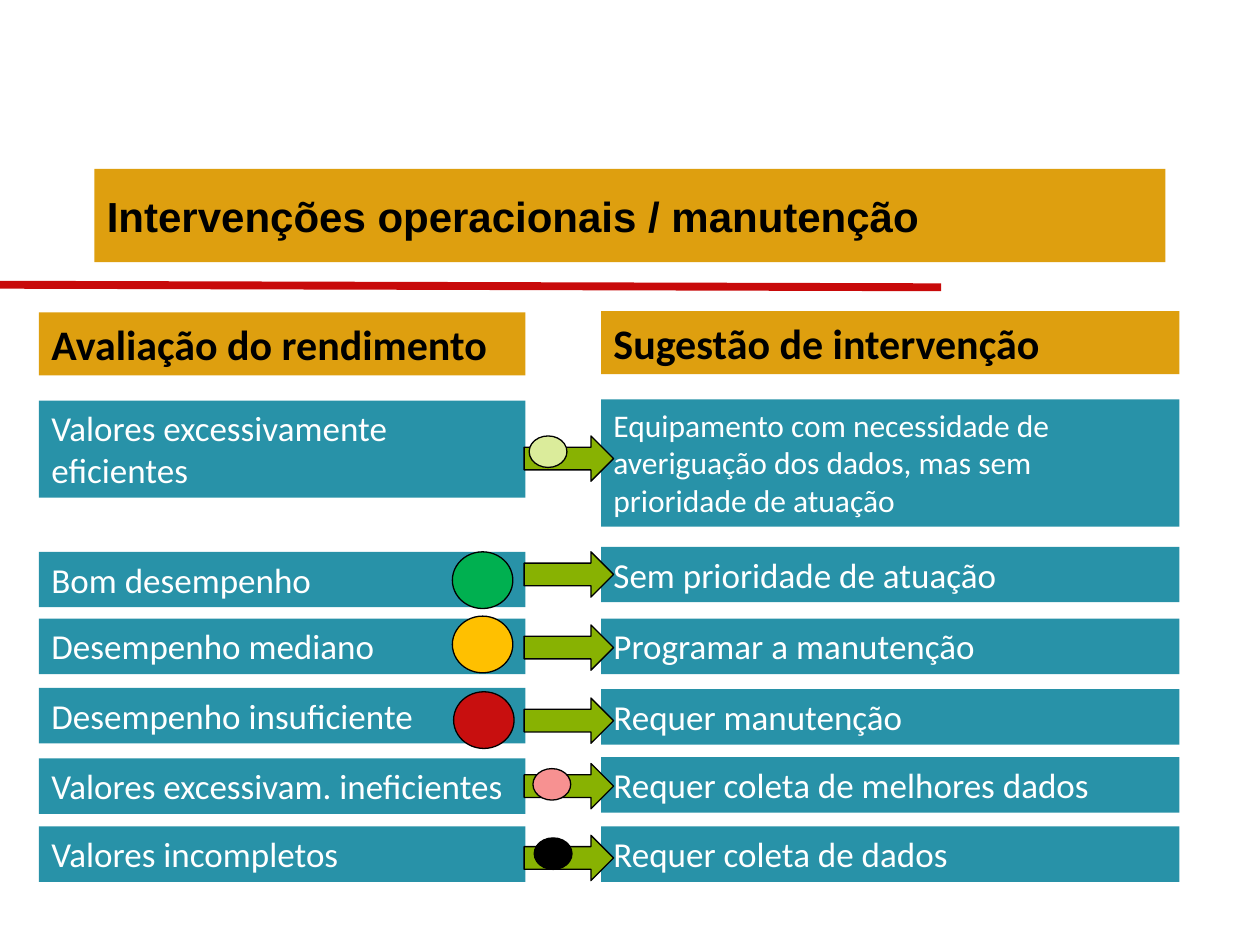
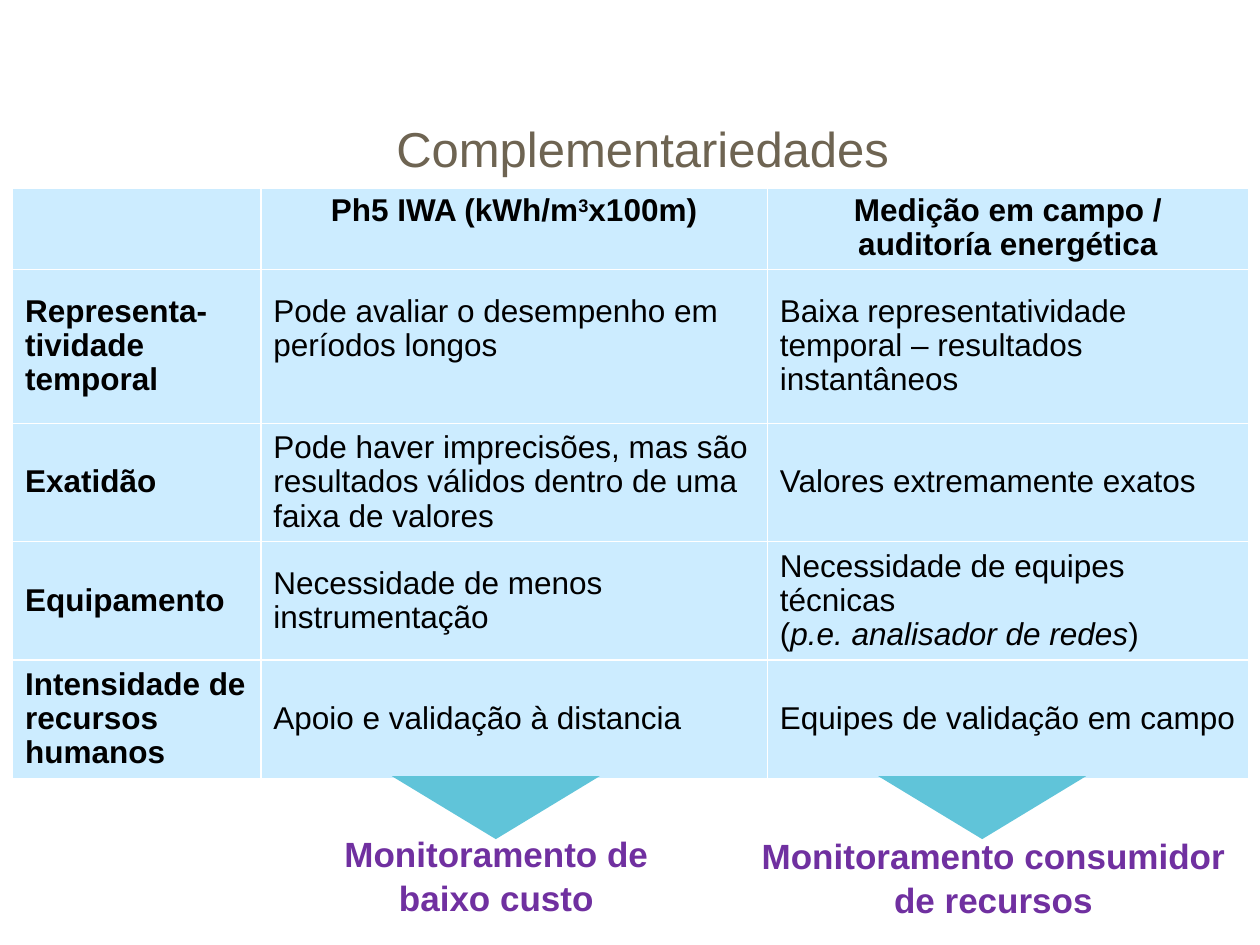
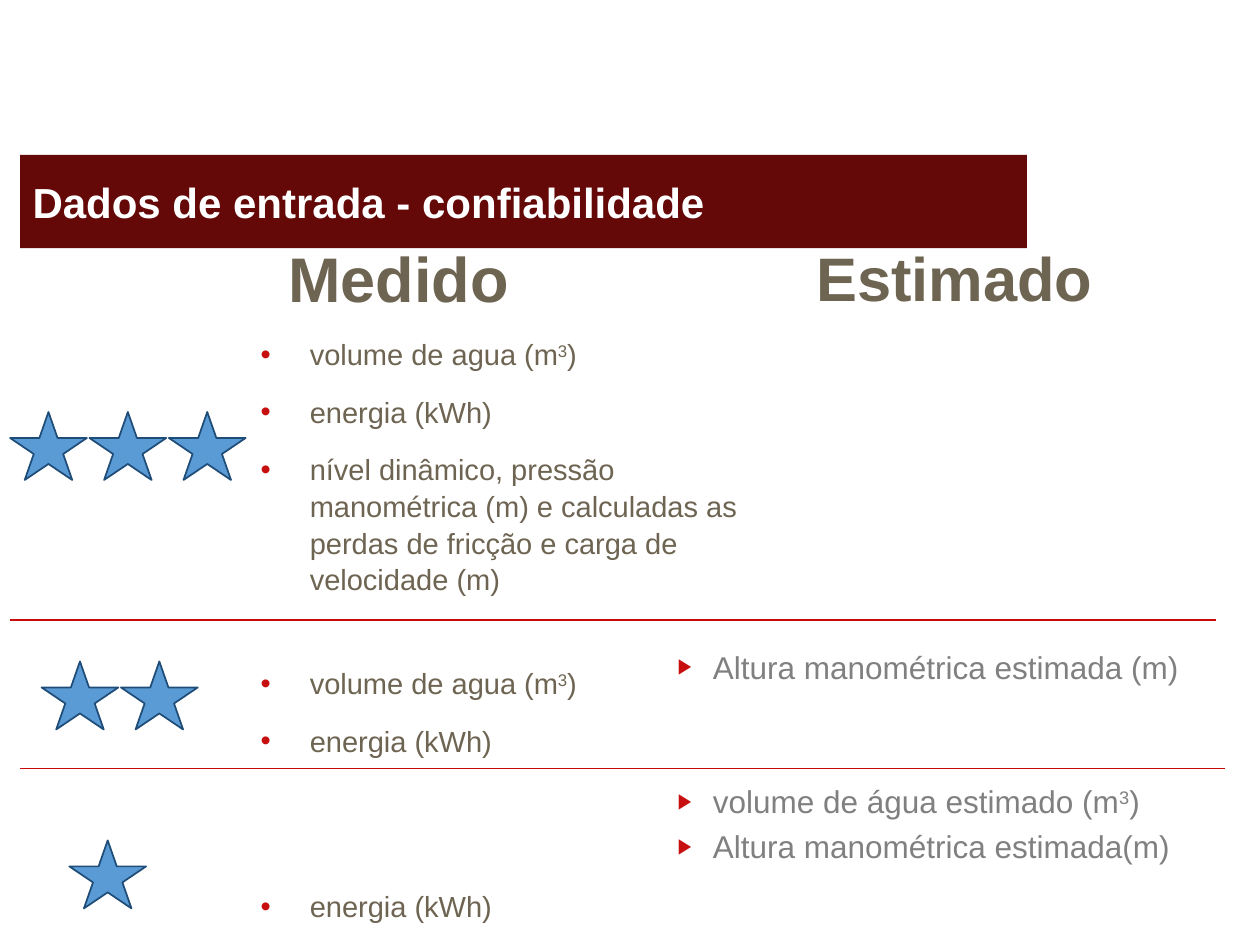
"""Builds three slides on pump performance: actions, complementarity and data reliability."""
from lxml.etree import SubElement
from pptx import Presentation
from pptx.dml.color import RGBColor
from pptx.enum.shapes import MSO_CONNECTOR, MSO_SHAPE as Shape
from pptx.enum.text import MSO_ANCHOR as Anchor, PP_ALIGN as Align
from pptx.oxml.ns import qn
from pptx.util import Inches, Pt

COLORS = {
    "gold": "DE9F0F", "teal": "2892A8", "maroon": "640808", "rule": "C80A0A",
    "bullet": "C80F0F", "arrow": "88B202", "black": "000000", "white": "FFFFFF",
    "taupe": "6E6452", "gray": "808080", "purple": "7030A0", "cell": "CCECFF",
    "cyan": "60C4D9", "star": "5B9BD5", "star_edge": "1F4D78",
    "good": "00B050", "medium": "FFC000", "poor": "C80F0F",
    "efficient": "DBEC9B", "inefficient": "F79191",
}
DOT = {"char": "•", "indent": 0.39, "hanging": 0.39}
ARROWHEAD = {"char": "▶", "indent": 0.4, "hanging": 0.28, "percent": 68}
CUBED = ("3", {"baseline": 30})


class SlideBuilder:
    """Holds the deck style and the current slide."""

    def __init__(self, deck):
        self.deck = deck
        self.slide = None

    def new_slide(self):
        self.slide = self.deck.slides.add_slide(self.deck.slide_layouts[6])

    def color(self, name):
        return RGBColor.from_string(COLORS[name])

    def add_span(self, para, text, style):
        span = para.add_run()
        span.text = text
        for name, value in style.items():
            if name == "color":
                span.font.color.rgb = self.color(value)
            elif name == "baseline":
                span._r.get_or_add_rPr().set("baseline", str(value * 1000))
            else:
                setattr(span.font, name, value)

    def add_bullet(self, para, bullet):
        props = para._p.get_or_add_pPr()
        props.set("marL", str(Inches(bullet["indent"])))
        props.set("indent", str(-Inches(bullet["hanging"])))
        tint = SubElement(props, qn("a:buClr"))
        SubElement(tint, qn("a:srgbClr")).set("val", COLORS["bullet"])
        if "percent" in bullet:
            SubElement(props, qn("a:buSzPct")).set("val", str(bullet["percent"] * 1000))
        SubElement(props, qn("a:buFont")).set("typeface", "Arial")
        SubElement(props, qn("a:buChar")).set("char", bullet["char"])

    def fill_text(self, frame, paragraphs, font, size, color, bold=False, layout=None,
                  bullet=None, before=0):
        frame.word_wrap = True
        base = {"name": font, "size": Pt(size), "bold": bold, "color": color}
        for index, content in enumerate(paragraphs):
            para = frame.add_paragraph() if index else frame.paragraphs[0]
            for name, value in (layout or {}).items():
                setattr(para, name, value)
            if index and before:
                para.space_before = Pt(before)
            if bullet:
                self.add_bullet(para, bullet)
            spans = [(content, {})] if isinstance(content, str) else content
            for text, extra in spans:
                self.add_span(para, text, {**base, **extra})

    def shape(self, kind, left, top, width, height, fill, line=None, weight=0.75):
        box = self.slide.shapes.add_shape(
            kind, Inches(left), Inches(top), Inches(width), Inches(height))
        box.shadow.inherit = False
        box.fill.solid()
        box.fill.fore_color.rgb = self.color(fill)
        if line:
            box.line.color.rgb = self.color(line)
            box.line.width = Pt(weight)
        else:
            box.line.fill.background()
        return box

    def label(self, text, left, top, width, height, fill, color="white", font="Calibri",
              size=20, bold=False, anchor=Anchor.TOP):
        box = self.shape(Shape.RECTANGLE, left, top, width, height, fill)
        box.text_frame.vertical_anchor = anchor
        self.fill_text(box.text_frame, [text], font, size, color, bold,
                       {"alignment": Align.LEFT})

    def banner(self, text, left, top, width, fill, color):
        self.label(text, left, top, width, 0.74, fill, color, "Arial", 24, True, Anchor.MIDDLE)

    def text(self, paragraphs, left, top, width, height, size, color="taupe",
             anchor=Anchor.TOP, **style):
        box = self.slide.shapes.add_textbox(
            Inches(left), Inches(top), Inches(width), Inches(height))
        box.text_frame.vertical_anchor = anchor
        self.fill_text(box.text_frame, paragraphs, "Arial", size, color, **style)

    def rule(self, left, top, right, bottom, weight):
        line = self.slide.shapes.add_connector(
            MSO_CONNECTOR.STRAIGHT, Inches(left), Inches(top), Inches(right), Inches(bottom))
        line.line.color.rgb = self.color("rule")
        line.line.width = Pt(weight)
        SubElement(line._element.spPr, qn("a:effectLst"))

    def table(self, rows, left, top, widths, heights):
        grid = self.slide.shapes.add_table(
            len(rows), len(widths), Inches(left), Inches(top),
            Inches(sum(widths)), Inches(sum(heights))).table
        grid.horz_banding = False
        for column, width in zip(grid.columns, widths):
            column.width = Inches(width)
        for row, height in zip(grid.rows, heights):
            row.height = Inches(height)
        for r, row in enumerate(rows):
            for c, paragraphs in enumerate(row):
                cell = grid.cell(r, c)
                cell.fill.solid()
                cell.fill.fore_color.rgb = self.color("cell")
                cell.vertical_anchor = Anchor.MIDDLE if r else Anchor.TOP
                layout = {"alignment": Align.LEFT if r else Align.CENTER,
                          "line_spacing": 0.97}
                self.fill_text(cell.text_frame, paragraphs, "Arial", 18, "black",
                               r == 0 or c == 0, layout)
        return grid


def build_interventions(page):
    page.new_slide()
    page.rule(0, 2.26, 7.47, 2.28, 4.5)
    page.banner("Intervenções operacionais / manutenção", 0.75, 1.34, 8.5, "gold", "black")
    left_x, left_width, right_x, right_width = 0.31, 3.86, 4.77, 4.59
    for text, left, top, width in (
            ("Avaliação do rendimento", left_x, 2.48, left_width),
            ("Sugestão de intervenção", right_x, 2.47, right_width)):
        page.label(text, left, top, width, 0.5, "gold", "black", size=24, bold=True)

    large, small = (0.48, 0.45), (0.3, 0.25)
    ratings = [
        ("Valores excessivamente eficientes", 3.18,
         "Equipamento com necessidade de averiguação dos dados, mas sem prioridade de atuação",
         3.17, 3.46, (4.2, 3.46), small, "efficient"),
        ("Bom desempenho", 4.38, "Sem prioridade de atuação",
         4.34, 4.38, (3.59, 4.38), large, "good"),
        ("Desempenho mediano", 4.91, "Programar a manutenção",
         4.91, 4.96, (3.59, 4.89), large, "medium"),
        ("Desempenho insuficiente", 5.46, "Requer manutenção",
         5.47, 5.54, (3.6, 5.49), large, "poor"),
        ("Valores excessivam. ineficientes", 6.02, "Requer coleta de melhores dados",
         6.01, 6.06, (4.23, 6.1), small, "inefficient"),
        ("Valores incompletos", 6.56, "Requer coleta de dados",
         6.56, 6.63, (4.24, 6.65), small, "black"),
    ]
    for index, (rating, rating_top, action, action_top, arrow_top, spot, size, color) in enumerate(ratings):
        rating_height, action_height, action_size = (0.44, 0.44, 20) if index else (0.77, 1.01, 18)
        page.label(rating, left_x, rating_top, left_width, rating_height, "teal")
        page.label(action, right_x, action_top, right_width, action_height, "teal",
                   size=action_size)
        page.shape(Shape.RIGHT_ARROW, 4.16, arrow_top, 0.71, 0.36, "arrow", "black")
        page.shape(Shape.OVAL, *spot, *size, color, "black")


def build_complements(page):
    page.new_slide()
    rows = [
        [[""], [[("Ph5 IWA (kWh/m", {}), CUBED, ("x100m)", {})]],
         ["Medição em campo /", "auditoría energética"]],
        [["Representa-tividade temporal"], ["Pode avaliar o desempenho em períodos longos"],
         ["Baixa representatividade temporal – resultados instantâneos"]],
        [["Exatidão"],
         ["Pode haver imprecisões, mas são resultados válidos dentro de uma faixa de valores"],
         ["Valores extremamente exatos"]],
        [["Equipamento"], ["Necessidade de menos instrumentação"],
         ["Necessidade de equipes técnicas",
          [("(", {}), ("p.e. analisador de redes", {"italic": True}), (")", {})]]],
        [["Intensidade de recursos humanos"], ["Apoio e validação à distancia"],
         ["Equipes de validação em campo"]],
    ]
    grid = page.table(rows, 0.1, 1.49, [1.97, 4.02, 3.82], [0.65, 1.22, 0.94, 0.94, 0.94])
    grid.cell(1, 1).margin_bottom = Inches(0.33)
    centered = {"alignment": Align.CENTER, "line_spacing": 1.05}
    page.text(["Complementariedades"], 0.1, 0.87, 10, 1.25, 28, layout=centered)
    for pointer_left, paragraphs, left, top, width in (
            (3.11, ["Monitoramento de", "baixo custo"], 1.86, 6.54, 4.16),
            (6.97, ["Monitoramento consumidor de recursos"], 5.77, 6.56, 4.23)):
        pointer = page.shape(Shape.ISOSCELES_TRIANGLE, pointer_left, 6.16, 1.65, 0.5, "cyan")
        pointer.rotation = 180
        page.text(paragraphs, left, top, width, 0.77, 20, "purple", bold=True, layout=centered)


def build_reliability(page):
    page.new_slide()
    page.text(["Medido"], 2.19, 1.85, 2.67, 1.25, 36, bold=True)
    page.text(["Estimado"], 6.38, 1.57, 3.15, 1.25, 35.1, anchor=Anchor.MIDDLE, bold=True)

    volume = [("volume de agua (m", {}), CUBED, (")", {})]
    energy = "energia (kWh)"
    head = ("nível dinâmico, pressão manométrica (m) e calculadas as perdas de fricção "
            "e carga de velocidade (m)")
    for paragraphs, top, height in (([volume, energy, head], 2.61, 2.2),
                                    ([volume, energy], 5.22, 0.85),
                                    ([energy], 6.99, 0.4)):
        page.text(paragraphs, 1.97, top, 4.09, height, 16.6, bullet=DOT, before=4,
                  layout={"space_after": Pt(8), "line_spacing": 1.05})

    estimated_volume = [("volume de água estimado (m", {}), CUBED, (")", {})]
    for paragraphs, top, height in ((["Altura manométrica estimada (m)"], 5.09, 0.4),
                                    ([estimated_volume, "Altura manométrica estimada(m)"],
                                     6.16, 0.75)):
        page.text(paragraphs, 5.16, top, 4.84, height, 18, "gray", bullet=ARROWHEAD, before=4)

    for count, left, top in ((3, 0.08, 3.27), (2, 0.33, 5.25), (1, 0.55, 6.67)):
        for index in range(count):
            page.shape(Shape.STAR_5_POINT, left + 0.63 * index, top, 0.61, 0.54,
                       "star", "star_edge", 1)
    page.rule(0.08, 4.92, 9.65, 4.92, 0.75)
    page.rule(0.16, 6.1, 9.72, 6.1, 0.75)
    page.banner("Dados de entrada - confiabilidade", 0.16, 1.23, 7.99, "maroon", "white")


def main():
    deck = Presentation()
    deck.slide_width, deck.slide_height = Inches(10), Inches(7.5)
    page = SlideBuilder(deck)
    build_interventions(page)
    build_complements(page)
    build_reliability(page)
    deck.save("out.pptx")


if __name__ == "__main__":
    main()
